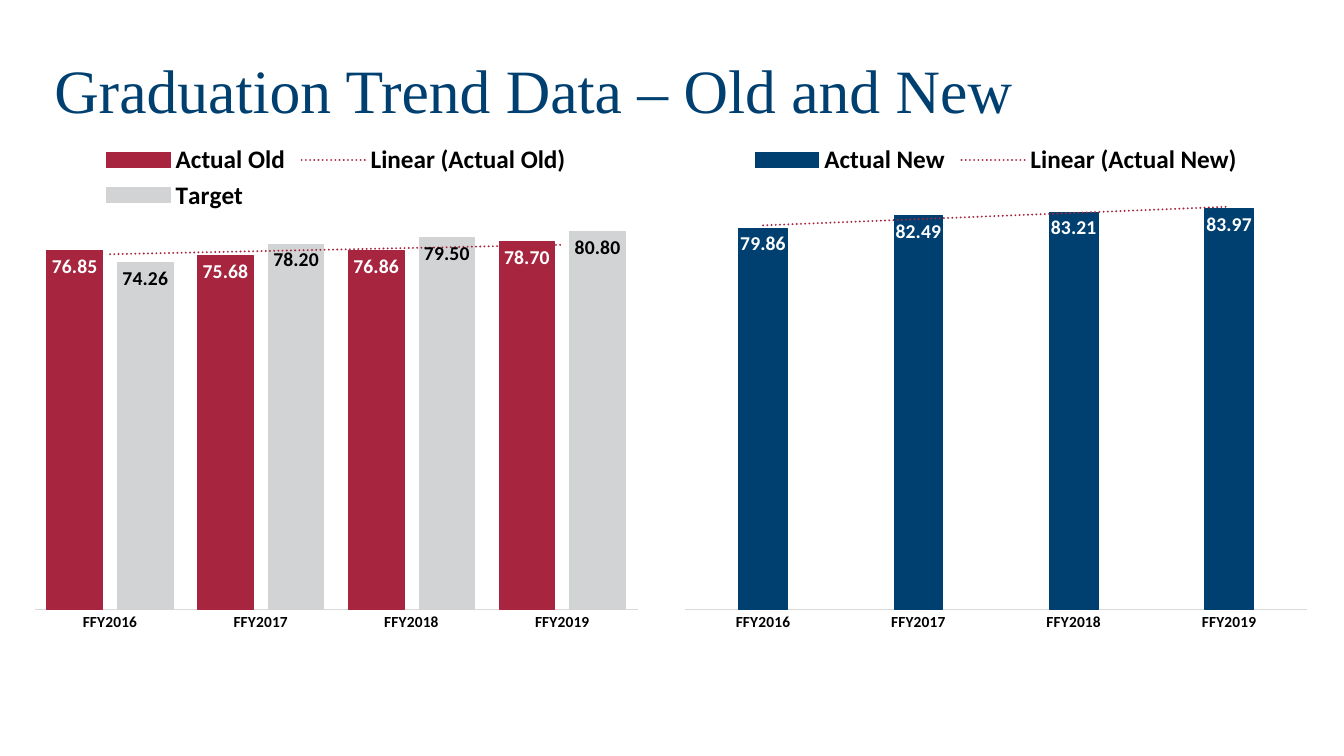
from dataclasses import dataclass
from typing import Any

from pptx import Presentation
from pptx.chart.data import CategoryChartData
from pptx.dml.color import RGBColor
from pptx.enum.chart import (XL_CHART_TYPE, XL_LABEL_POSITION,
                             XL_LEGEND_POSITION, XL_TICK_MARK)
from pptx.enum.text import MSO_ANCHOR
from pptx.oxml import parse_xml
from pptx.oxml.ns import nsdecls, qn
from pptx.util import Inches, Pt

COLUMNS = XL_CHART_TYPE.COLUMN_CLUSTERED
INSIDE_END = XL_LABEL_POSITION.INSIDE_END
TOP = XL_LEGEND_POSITION.TOP
NO_TICK = XL_TICK_MARK.NONE
MIDDLE = MSO_ANCHOR.MIDDLE

BLUE, RED, GREY = "004071", "A7253F", "D1D3D4"
AXIS, BLACK, WHITE = "D9D9D9", "000000", "FFFFFF"
YEARS = [f"FFY{year}" for year in range(2016, 2020)]
CHART_TOP, CHART_HEIGHT = 1.31, 5.09
PLOT_X, PLOT_W = 0.02, 0.96


@dataclass
class Series:
    name: str
    values: list[float]
    color: str
    label_color: str
    trend: bool = True


@dataclass
class ColumnChart:
    left: float
    width: float
    gap: int
    plot_y: float
    plot_h: float
    number_format: str
    series: list[Series]


CHARTS = [
    ColumnChart(0.22, 6.23, 44, 0.02, 0.91, "0.00", [
        Series("Actual Old", [76.85, 75.68, 76.86, 78.7], RED, WHITE),
        Series("Target", [74.26, 78.2, 79.5, 80.8], GREY, BLACK, trend=False),
    ]),
    ColumnChart(6.67, 6.42, 219, 0, 0.93, "General", [
        Series("Actual New", [79.86, 82.49, 83.21, 83.97], BLUE, WHITE),
    ]),
]


def rgb(color: str) -> RGBColor:
    return RGBColor.from_string(color)


def set_attrs(target: Any, values: dict[str, Any]) -> None:
    for name, value in values.items():
        setattr(target, name, value)


def set_font(font: Any, size: int, color: str, name: str = "Calibri",
             bold: bool = True) -> None:
    set_attrs(font, {"size": Pt(size), "name": name, "bold": bold})
    font.color.rgb = rgb(color)


def set_line(line: Any, color: str) -> None:
    line.color.rgb = rgb(color)
    line.width = Pt(0.75)


def add_trend(ser: Any) -> None:
    trend = parse_xml(
        f'<c:trendline {nsdecls("c", "a")}><c:spPr>'
        f'<a:ln w="{Pt(1.5)}" cap="rnd"><a:solidFill><a:srgbClr val="{RED}"/></a:solidFill>'
        '<a:prstDash val="sysDot"/></a:ln></c:spPr><c:trendlineType val="linear"/>'
        '<c:dispRSqr val="0"/><c:dispEq val="0"/></c:trendline>')
    ser._element.find(qn("c:cat")).addprevious(trend)


def place_plot(chart: Any, spec: ColumnChart) -> None:
    area = chart._chartSpace.chart.plotArea
    for layout in area.findall(qn("c:layout")):
        area.remove(layout)
    modes = "".join(f'<c:{axis}Mode val="edge"/>' for axis in "xy")
    sizes = "".join(f'<c:{key} val="{value}"/>' for key, value in zip(
        "xywh", (PLOT_X, spec.plot_y, PLOT_W, spec.plot_h)))
    area.insert(0, parse_xml(
        f'<c:layout {nsdecls("c")}><c:manualLayout><c:layoutTarget val="inner"/>'
        f'{modes}{sizes}</c:manualLayout></c:layout>'))


def add_column_chart(s: Any, spec: ColumnChart) -> None:
    data = CategoryChartData(number_format=spec.number_format)
    data.categories = YEARS
    for item in spec.series:
        data.add_series(item.name, item.values)
    chart = s.shapes.add_chart(
        COLUMNS, Inches(spec.left), Inches(CHART_TOP),
        Inches(spec.width), Inches(CHART_HEIGHT), data).chart
    set_attrs(chart, {"has_title": False, "has_legend": True})
    set_font(chart.font, 10, BLACK)

    # Legend
    set_attrs(chart.legend, {"position": TOP, "include_in_layout": False})
    set_font(chart.legend.font, 18, BLACK)

    # Axes
    set_attrs(chart.value_axis, {
        "visible": False, "has_major_gridlines": False,
        "minimum_scale": 0, "maximum_scale": 100})
    axis = chart.category_axis
    set_attrs(axis, {"major_tick_mark": NO_TICK, "minor_tick_mark": NO_TICK})
    set_font(axis.tick_labels.font, 11, BLACK)
    set_line(axis.format.line, AXIS)

    # Columns, value labels and trend lines
    plot = chart.plots[0]
    set_attrs(plot, {"gap_width": spec.gap, "overlap": -27,
                     "vary_by_categories": False})
    for item, ser in zip(spec.series, plot.series):
        ser.format.fill.solid()
        ser.format.fill.fore_color.rgb = rgb(item.color)
        set_line(ser.format.line, item.color)
        set_attrs(ser.data_labels, {
            "show_value": True, "position": INSIDE_END,
            "number_format": spec.number_format,
            "number_format_is_linked": False})
        set_font(ser.data_labels.font, 14, item.label_color)
        if item.trend:
            add_trend(ser)
    place_plot(chart, spec)


def add_title(s: Any, text: str) -> None:
    tf = s.shapes.add_textbox(
        Inches(0.44), Inches(0.16), Inches(12.43), Inches(1.53)).text_frame
    set_attrs(tf, {"word_wrap": True, "vertical_anchor": MIDDLE})
    p = tf.paragraphs[0]
    p.line_spacing = 0.9
    r = p.add_run()
    r.text = text
    set_font(r.font, 44, BLUE, "Times New Roman", bold=False)


def main() -> None:
    prs = Presentation()
    set_attrs(prs, {"slide_width": Inches(13.33), "slide_height": Inches(7.5)})
    s = prs.slides.add_slide(prs.slide_layouts[6])
    add_title(s, "Graduation Trend Data – Old and New")
    for spec in CHARTS:
        add_column_chart(s, spec)
    prs.save("out.pptx")


if __name__ == "__main__":
    main()
